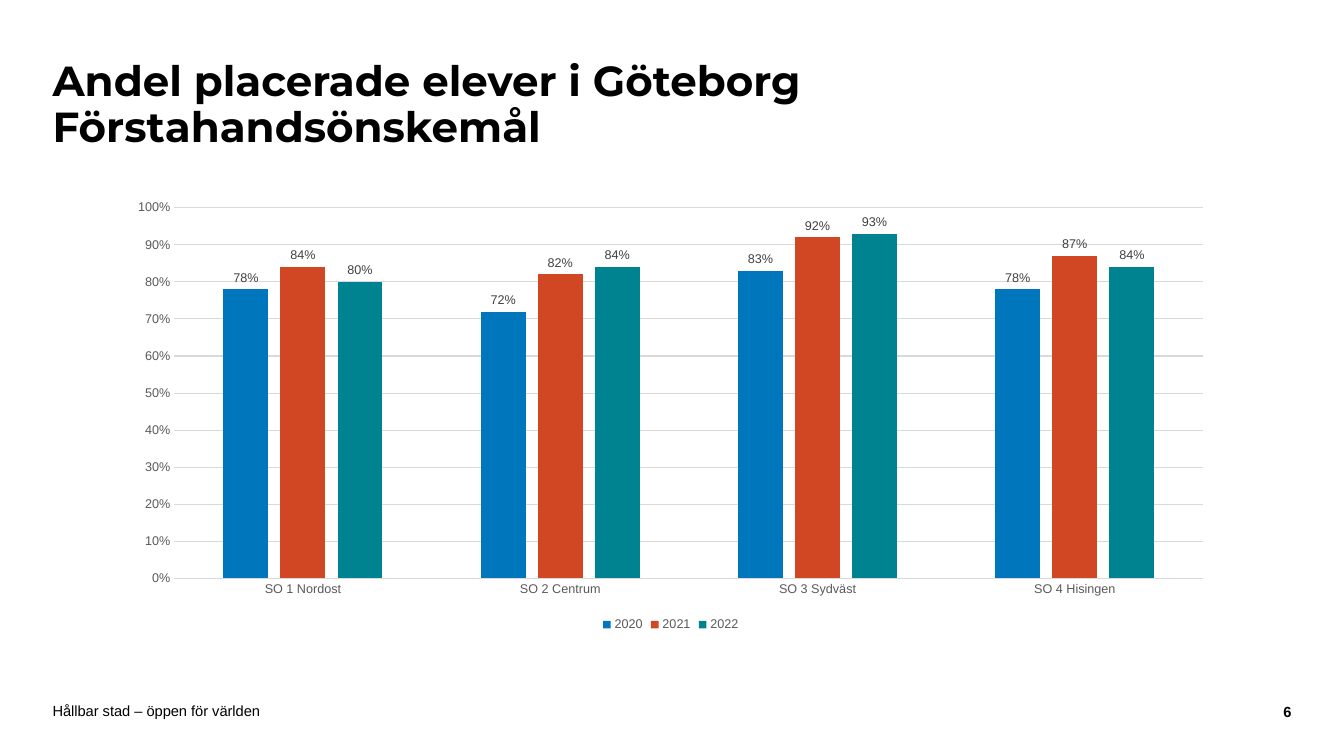
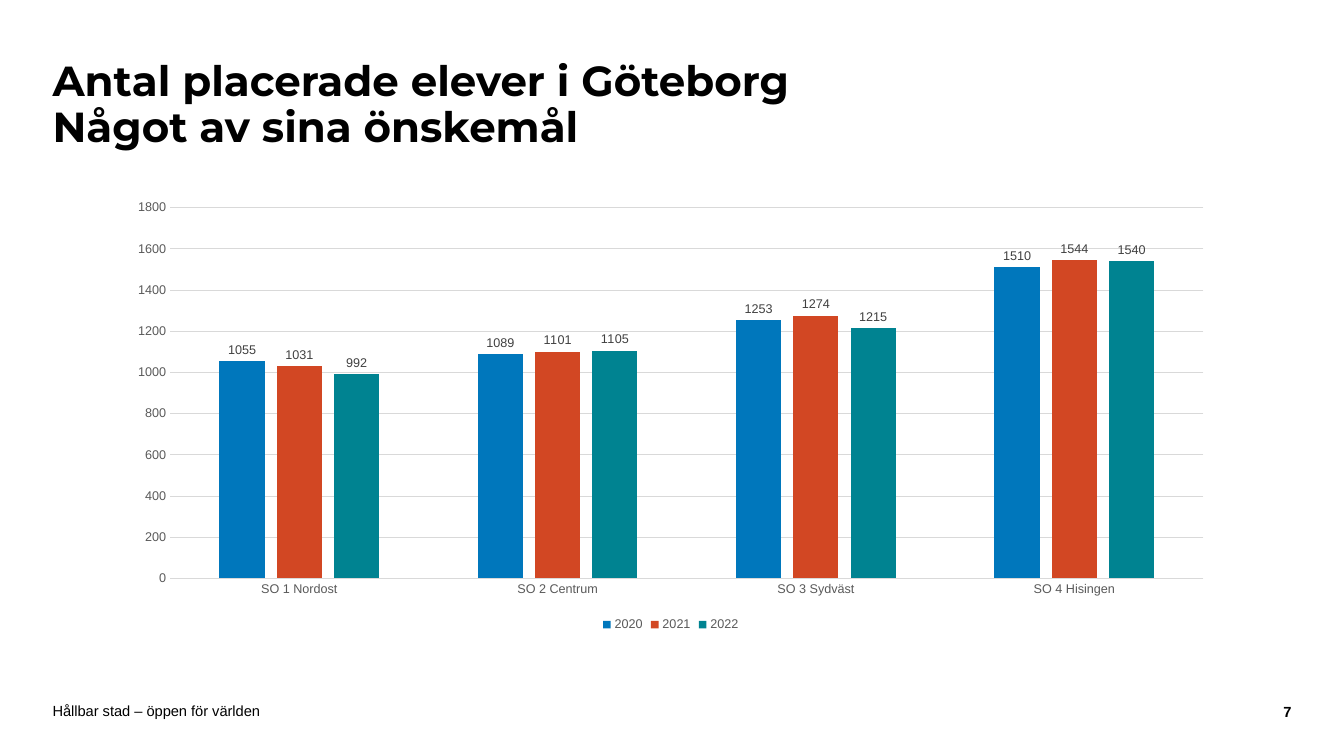
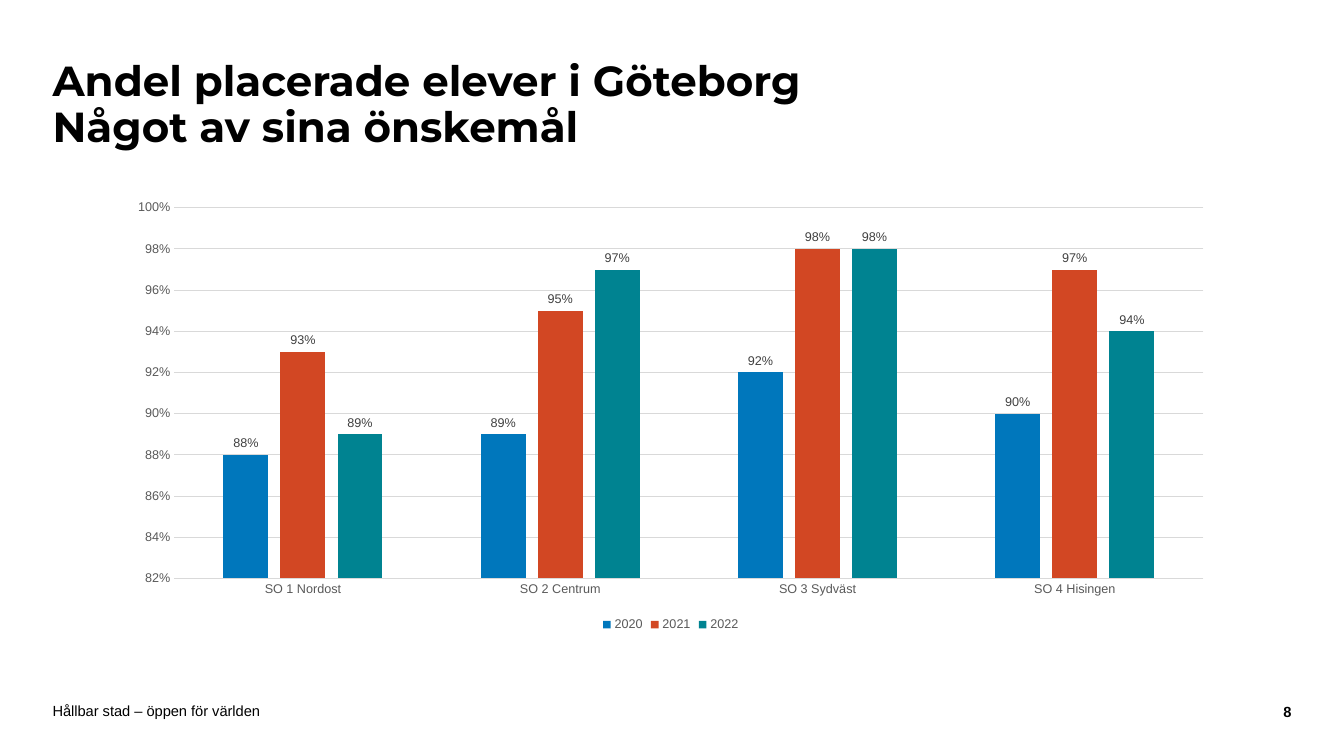
from dataclasses import dataclass

from pptx import Presentation
from pptx.chart.data import CategoryChartData
from pptx.dml.color import RGBColor
from pptx.enum.chart import (XL_CHART_TYPE, XL_LABEL_POSITION,
                             XL_LEGEND_POSITION, XL_TICK_MARK)
from pptx.enum.text import MSO_ANCHOR, PP_ALIGN
from pptx.util import Pt

COLUMNS = XL_CHART_TYPE.COLUMN_CLUSTERED
OUTSIDE = XL_LABEL_POSITION.OUTSIDE_END
BOTTOM = XL_LEGEND_POSITION.BOTTOM
NO_TICK = XL_TICK_MARK.NONE
MIDDLE = MSO_ANCHOR.MIDDLE
LEFT, RIGHT = PP_ALIGN.LEFT, PP_ALIGN.RIGHT


@dataclass(frozen=True)
class Theme:
    head: str = "Montserrat"
    body: str = "Arial"
    ink: str = "000000"
    paper: str = "FFFFFF"
    label: str = "404040"
    axis: str = "595959"
    grid: str = "D9D9D9"
    bars: tuple = ("0077BC", "D24723", "008391")
    title: float = 30
    foot: float = 10.5
    chart: float = 10
    small: float = 9
    rule: float = 0.75


THEME = Theme()
SIZE = (960, 540)
TITLE_BOX = (37.5, 30.2, 722, 91)
CHART_BOX = (82.8, 136.8, 792.7, 317.5)
FOOT_BOX = (37.5, 502, 885, 11.5)
FOOTER = "Hållbar stad – öppen för världen"
FIRST = 6
YEARS = ("2020", "2021", "2022")
AREAS = ("SO 1 Nordost", "SO 2 Centrum", "SO 3 Sydväst", "SO 4 Hisingen")

# Title lines, number format, axis (low, high, step), values for each year
SLIDES = (
    (("Andel placerade elever i Göteborg", "Förstahandsönskemål"),
     "0%", (0, 1, 0.1),
     ((0.78, 0.72, 0.83, 0.78),
      (0.84, 0.82, 0.92, 0.87),
      (0.8, 0.84, 0.93, 0.84))),
    (("Antal placerade elever i Göteborg", "Något av sina önskemål"),
     "General", (0, 1800, 200),
     ((1055, 1089, 1253, 1510),
      (1031, 1101, 1274, 1544),
      (992, 1105, 1215, 1540))),
    (("Andel placerade elever i Göteborg", "Något av sina önskemål"),
     "0%", (0.82, 1, 0.02),
     ((0.88, 0.89, 0.92, 0.9),
      (0.93, 0.95, 0.98, 0.97),
      (0.89, 0.97, 0.98, 0.94))),
)


def style(font, size, color, face=THEME.body, bold=False):
    font.name, font.size, font.bold = face, Pt(size), bold
    font.color.rgb = RGBColor.from_string(color)


def rule(line):
    line.width = Pt(THEME.rule)
    line.color.rgb = RGBColor.from_string(THEME.grid)


def add_text(slide, box, lines, size, face=THEME.body, bold=False,
             align=LEFT, pad=0, space=1.0):
    """Place one paragraph, with a line break between its lines."""
    frame = slide.shapes.add_textbox(*map(Pt, box)).text_frame
    frame.word_wrap = True
    frame.vertical_anchor = MIDDLE
    frame.margin_left = frame.margin_right = 0
    frame.margin_top = frame.margin_bottom = Pt(pad)
    para = frame.paragraphs[0]
    para.alignment, para.line_spacing = align, space
    for index, line in enumerate(lines):
        if index:
            para.add_line_break()
        run = para.add_run()
        run.text = line
        style(run.font, size, THEME.ink, face, bold)


def add_title(slide, box, lines):
    add_text(slide, box, lines, THEME.title, THEME.head, True,
             pad=3.6, space=0.9)


def add_footer(slide, box, number):
    left, top, width, height = box
    page = 46
    add_text(slide, (left, top, 680, height), [FOOTER], THEME.foot)
    add_text(slide, (left + width - page, top + 0.5, page, height),
             [str(number)], THEME.foot, bold=True, align=RIGHT)


def add_bars(slide, box, form, scale, rows):
    data = CategoryChartData(number_format=form)
    data.categories = AREAS
    for year, row in zip(YEARS, rows):
        data.add_series(year, row)
    chart = slide.shapes.add_chart(COLUMNS, *map(Pt, box), data).chart
    style(chart.font, THEME.chart, THEME.ink)
    chart.has_title = False
    chart.has_legend = True
    chart.legend.position = BOTTOM
    chart.legend.include_in_layout = False
    style(chart.legend.font, THEME.small, THEME.axis)

    plot = chart.plots[0]
    plot.gap_width, plot.overlap = 219, -27
    plot.vary_by_categories = False
    for series, color in zip(plot.series, THEME.bars):
        series.format.fill.solid()
        series.format.fill.fore_color.rgb = RGBColor.from_string(color)
        labels = series.data_labels
        labels.show_value, labels.position = True, OUTSIDE
        labels.number_format = form
        labels.number_format_is_linked = False
        style(labels.font, THEME.small, THEME.label)
    set_axes(chart, form, scale)


def set_axes(chart, form, scale):
    areas, values = chart.category_axis, chart.value_axis
    for axis in (areas, values):
        axis.major_tick_mark = axis.minor_tick_mark = NO_TICK
        style(axis.tick_labels.font, THEME.small, THEME.axis)
    rule(areas.format.line)
    values.format.line.fill.background()
    values.has_major_gridlines = True
    rule(values.major_gridlines.format.line)
    values.minimum_scale, values.maximum_scale, values.major_unit = scale
    values.tick_labels.number_format = form
    values.tick_labels.number_format_is_linked = False


def main():
    deck = Presentation()
    deck.slide_width, deck.slide_height = map(Pt, SIZE)
    blank = deck.slide_layouts[6]
    for number, (title, form, scale, rows) in enumerate(SLIDES, FIRST):
        slide = deck.slides.add_slide(blank)
        slide.background.fill.solid()
        slide.background.fill.fore_color.rgb = RGBColor.from_string(THEME.paper)
        add_footer(slide, FOOT_BOX, number)
        add_title(slide, TITLE_BOX, title)
        add_bars(slide, CHART_BOX, form, scale, rows)
    deck.save("out.pptx")


if __name__ == "__main__":
    main()
